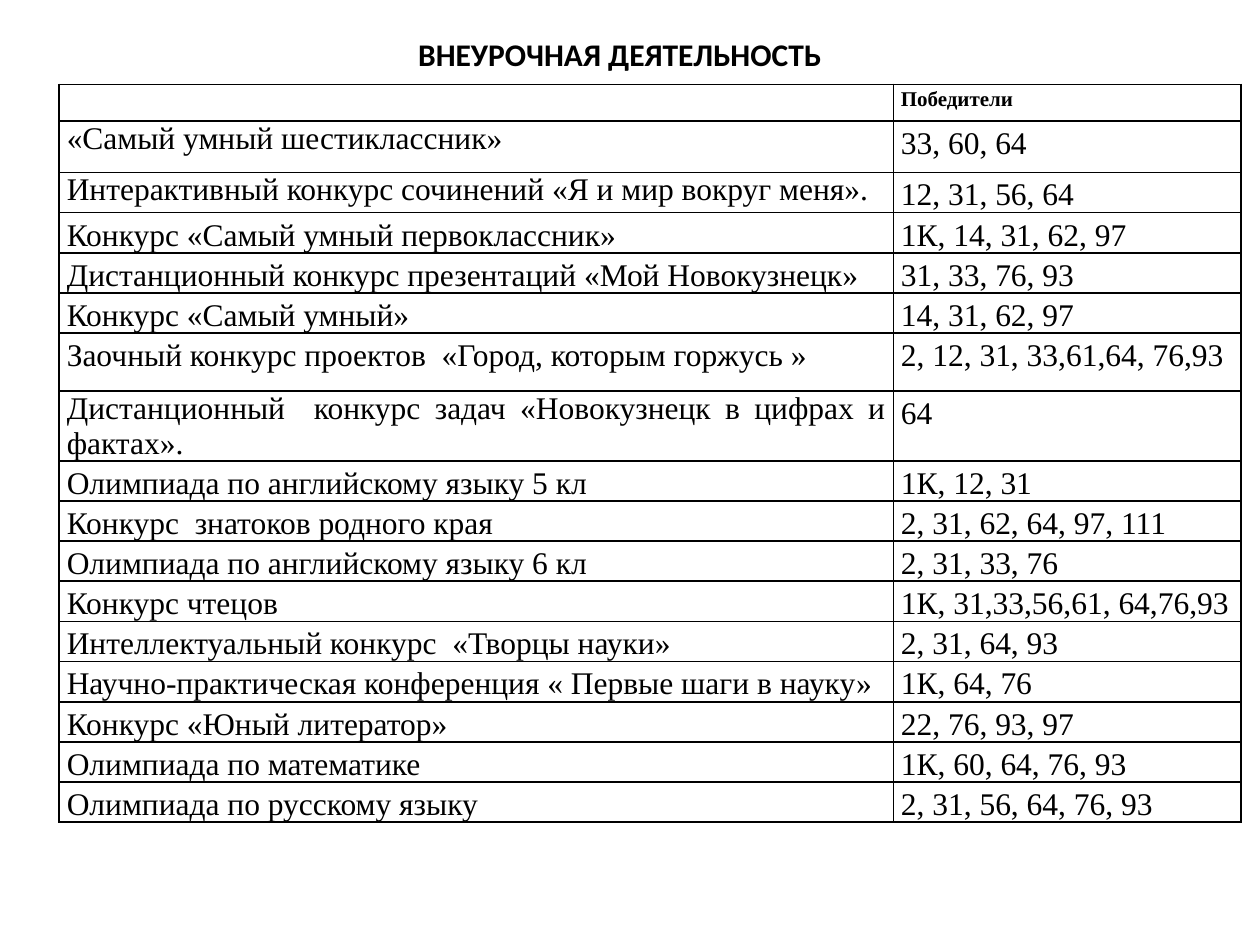
from lxml import etree
from pptx import Presentation
from pptx.dml.color import RGBColor
from pptx.enum.text import MSO_ANCHOR, PP_ALIGN
from pptx.oxml.ns import qn
from pptx.util import Inches, Pt

BLACK = RGBColor(0x00, 0x00, 0x00)
CENTER, JUSTIFY, LEFT = PP_ALIGN.CENTER, PP_ALIGN.JUSTIFY, PP_ALIGN.LEFT
TOP = MSO_ANCHOR.TOP
TITLE_ONLY = 5

COLUMN_WIDTHS = [6.62, 2.76]
ROW_HEIGHT = 0.29
TALL_ROWS = {1: 0.41, 6: 0.46, 7: 0.51, 11: 0.32}
SINGLE_SPACED_ROWS = {1, 2, 7}  # contest names only
CONTESTS = [
    ("", "Победители"),
    ("«Самый умный шестиклассник»", "33, 60, 64"),
    ("Интерактивный конкурс сочинений «Я и мир вокруг меня».", "12, 31, 56, 64"),
    ("Конкурс «Самый умный первоклассник»", "1К, 14, 31, 62, 97"),
    ("Дистанционный конкурс презентаций «Мой Новокузнецк»", "31, 33, 76, 93"),
    ("Конкурс «Самый умный»", "14, 31, 62, 97"),
    ("Заочный конкурс проектов  «Город, которым горжусь »", "2, 12, 31, 33,61,64, 76,93"),
    ("Дистанционный  конкурс задач «Новокузнецк в цифрах и фактах».", "64"),
    ("Олимпиада по английскому языку 5 кл", "1К, 12, 31"),
    ("Конкурс  знатоков родного края", "2, 31, 62, 64, 97, 111"),
    ("Олимпиада по английскому языку 6 кл", "2, 31, 33, 76"),
    ("Конкурс чтецов", "1К, 31,33,56,61, 64,76,93"),
    ("Интеллектуальный конкурс  «Творцы науки»", "2, 31, 64, 93"),
    ("Научно-практическая конференция « Первые шаги в науку»", "1К, 64, 76"),
    ("Конкурс «Юный литератор»", "22, 76, 93, 97"),
    ("Олимпиада по математике", "1К, 60, 64, 76, 93"),
    ("Олимпиада по русскому языку", "2, 31, 56, 64, 76, 93"),
]


def set_font(font, name, size, bold):
    font.name, font.size, font.bold = name, Pt(size), bold
    font.color.rgb = BLACK


def add_borders(cell):
    properties = cell._tc.get_or_add_tcPr()
    for index, side in enumerate(("a:lnL", "a:lnR", "a:lnT", "a:lnB")):
        line = etree.Element(qn(side), w=str(Pt(1)))
        fill = etree.SubElement(line, qn("a:solidFill"))
        etree.SubElement(fill, qn("a:srgbClr"), val=str(BLACK))
        properties.insert(index, line)


presentation = Presentation()
presentation.slide_width, presentation.slide_height = Inches(10), Inches(7.5)
slide = presentation.slides.add_slide(presentation.slide_layouts[TITLE_ONLY])

# Title
title = slide.shapes.title
title.left, title.top = Inches(3.2), Inches(0.23)
title.width, title.height = Inches(3.44), Inches(0.4)
title.text_frame.text = "ВНЕУРОЧНАЯ ДЕЯТЕЛЬНОСТЬ"
title.text_frame.word_wrap = False
paragraph = title.text_frame.paragraphs[0]
paragraph.alignment = CENTER
set_font(paragraph.runs[0].font, "Calibri", 18, True)

# Table grid
heights = [TALL_ROWS.get(row, ROW_HEIGHT) for row in range(len(CONTESTS))]
table = slide.shapes.add_table(
    len(CONTESTS), len(COLUMN_WIDTHS), Inches(0.47), Inches(0.67),
    Inches(sum(COLUMN_WIDTHS)), Inches(sum(heights))).table
table.horz_banding = False
for column, width in zip(table.columns, COLUMN_WIDTHS):
    column.width = Inches(width)
for row, height in zip(table.rows, heights):
    row.height = Inches(height)

# Contests and the schools that won them
for row, texts in enumerate(CONTESTS):
    is_header = row == 0
    for column, text in enumerate(texts):
        is_name = column == 0
        cell = table.cell(row, column)
        cell.margin_left = cell.margin_right = Inches(0.06)
        cell.margin_top = cell.margin_bottom = 0
        cell.vertical_anchor = TOP
        cell.fill.background()
        add_borders(cell)
        cell.text_frame.text = text
        paragraph = cell.text_frame.paragraphs[0]
        paragraph.alignment = JUSTIFY if is_name else LEFT
        single = is_name and (is_header or row in SINGLE_SPACED_ROWS)
        paragraph.line_spacing = 1.0 if single else 1.15
        size = 12 if is_header else 18
        paragraph.font.size = Pt(size)
        for run in paragraph.runs:
            set_font(run.font, "Times New Roman", size, is_header)

presentation.save("out.pptx")
